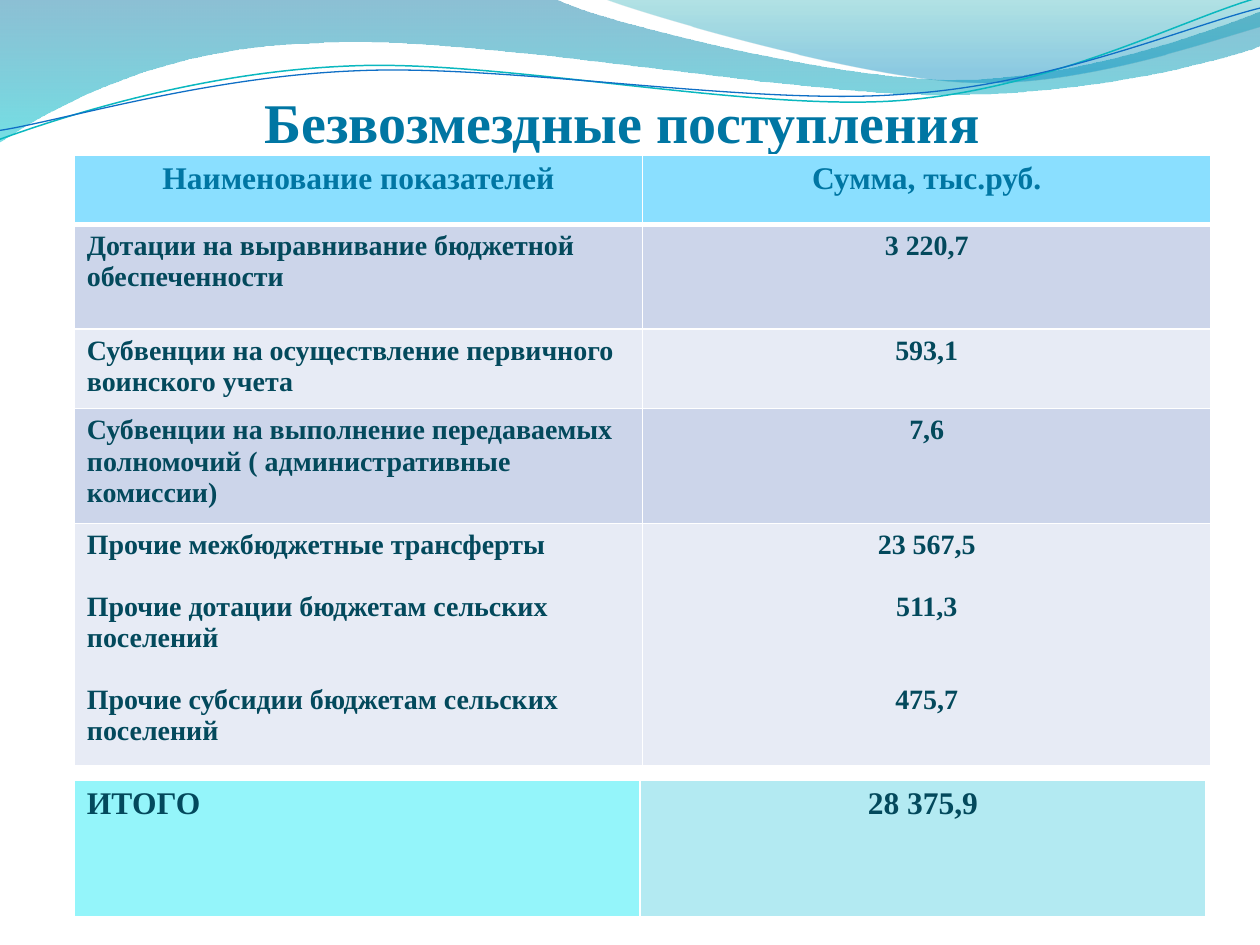
from lxml import etree
from pptx import Presentation
from pptx.dml.color import RGBColor
from pptx.enum.text import MSO_ANCHOR, PP_ALIGN
from pptx.oxml.ns import qn
from pptx.util import Inches, Pt

FONT = "Times New Roman"
WHITE = RGBColor(0xFF, 0xFF, 0xFF)
TITLE_BLUE = RGBColor(0x00, 0x76, 0xA3)
DARK_TEAL = RGBColor(0x03, 0x49, 0x5C)
HEADER_FILL = RGBColor(0x8A, 0xDF, 0xFF)
BAND_FILLS = (RGBColor(0xCC, 0xD5, 0xEA), RGBColor(0xE7, 0xEB, 0xF5))
TOTAL_FILLS = (RGBColor(0x94, 0xF5, 0xFA), RGBColor(0xB3, 0xEA, 0xF2))
WAVE_BLUE = RGBColor(0x00, 0x74, 0xA1)
WAVE_CYAN = RGBColor(0x00, 0xC6, 0xCF)
CREST_TEAL = RGBColor(0x00, 0xA1, 0xA9)
CREST_BLUE = RGBColor(0x00, 0x8B, 0xBF)
LINE_TEAL = RGBColor(0x0A, 0xB8, 0xBF)
LINE_BLUE = RGBColor(0x0F, 0x6F, 0xC6)

WAVE_BOX = (-0.01, -0.01, 10.02, 1.14)
WAVE = [(0, 0), (4.4, -0.01), (4.76, 0.17, 6.64, 0.63, 7.58, 0.63),
        (8.53, 0.63, 9.58, 0.26, 10, 0.09), (10.01, 0.36),
        (9.83, 0.44, 8.7, 0.76, 7.46, 0.75), (6.22, 0.75, 3.82, 0.28, 2.57, 0.34),
        (1.29, 0.36, 0.46, 0.83, -0.01, 1.13), (0, 0)]
CREST_BOX = (4.79, -0.01, 5.21, 0.7)
CREST = [(4.79, -0.01), (5.09, 0.11, 6.82, 0.62, 7.69, 0.65),
         (8.56, 0.69, 9.61, 0.32, 10, 0.21), (10, 0), (4.79, -0.01)]
UPPER_BOX = (-0.02, 0.22, 10.02, 0.71)
UPPER_LINE = [(-0.02, 0.87), (0.47, 0.72, 1.58, 0.41, 2.78, 0.42),
              (3.96, 0.42, 5.91, 0.93, 7.12, 0.9), (8.32, 0.87, 9.4, 0.36, 10, 0.22)]
LOWER_BOX = (-0.02, 0.3, 10.03, 0.58)
LOWER_LINE = [(-0.02, 0.8), (0.46, 0.75, 1.64, 0.45, 2.83, 0.46),
              (4.03, 0.46, 5.96, 0.89, 7.16, 0.85), (8.35, 0.83, 9.42, 0.42, 10.02, 0.3)]
LINE_TILT = 357.3

HEADERS = ("Наименование показателей", "Сумма, тыс.руб.")
ROWS = [
    (0.83, ["Дотации на выравнивание бюджетной обеспеченности"], ["3 220,7"]),
    (0.6, ["Субвенции на осуществление первичного воинского учета"], ["593,1"]),
    (0.91, ["Субвенции на выполнение передаваемых полномочий "
            "( административные комиссии)"], ["7,6"]),
    (1.33, ["Прочие межбюджетные трансферты",
            "Прочие дотации бюджетам сельских поселений",
            "Прочие субсидии бюджетам сельских поселений"],
     ["23 567,5", "511,3", "475,7"]),
]
NAME_GAPS = (0, 17.7, 17.7)
AMOUNT_GAPS = (0, 17.7, 35.4)


def add_outline(slide, box, segments, closed):
    """Add a freeform of lines and cubic curves in the given box."""
    left, top, width, height = map(Inches, box)
    builder = slide.shapes.build_freeform(left, top)
    builder.add_line_segments([(left + width, top), (left + width, top + height)])
    shape = builder.convert_to_shape()
    shape.shadow.inherit = False
    outline = next(shape._element.iter(qn("a:path")))
    for child in list(outline):
        outline.remove(child)
    for index, segment in enumerate(segments):
        kind = "cubicBezTo" if len(segment) == 6 else "lnTo" if index else "moveTo"
        command = etree.SubElement(outline, qn(f"a:{kind}"))
        for x, y in zip(segment[::2], segment[1::2]):
            etree.SubElement(command, qn("a:pt"),
                             x=str(Inches(x) - left), y=str(Inches(y) - top))
    if closed:
        etree.SubElement(outline, qn("a:close"))
    return shape


def add_wave(slide, box, segments, stops):
    """Add a filled wave with a translucent vertical gradient."""
    shape = add_outline(slide, box, segments, True)
    shape.line.fill.background()
    shape.fill.gradient()
    shape.fill.gradient_angle = 270
    for stop, (position, color, _) in zip(shape.fill.gradient_stops, stops):
        stop.position = position
        stop.color.rgb = color
    colors = shape._element.spPr.iter(qn("a:srgbClr"))
    for color, (_, _, opacity) in zip(list(colors), stops):
        etree.SubElement(color, qn("a:alpha"), val=str(opacity * 1000))


def add_wave_line(slide, box, segments, color, width):
    """Add an open, slightly tilted curve."""
    shape = add_outline(slide, box, segments, False)
    shape.rotation = LINE_TILT
    shape.fill.background()
    shape.line.color.rgb = color
    shape.line.width = Pt(width)


def add_waves(slide):
    """Add the decoration along the top edge."""
    add_wave(slide, WAVE_BOX, WAVE, [(0, WAVE_BLUE, 45), (1, WAVE_CYAN, 55)])
    add_wave(slide, CREST_BOX, CREST, [(0, CREST_TEAL, 30), (0.8, CREST_BLUE, 45)])
    add_wave_line(slide, UPPER_BOX, UPPER_LINE, LINE_TEAL, 0.85)
    add_wave_line(slide, LOWER_BOX, LOWER_LINE, LINE_BLUE, 0.75)


def style_paragraph(paragraph, text, size, color, centred):
    """Write bold text into a paragraph."""
    paragraph.text = text
    paragraph.alignment = PP_ALIGN.CENTER if centred else PP_ALIGN.LEFT
    paragraph.font.name = FONT
    paragraph.font.size = Pt(size)
    paragraph.font.bold = True
    paragraph.font.color.rgb = color


def add_title(slide, left, top, width, height):
    """Add the slide title at the bottom of its box."""
    frame = slide.shapes.add_textbox(left, top, width, height).text_frame
    frame.word_wrap = True
    frame.vertical_anchor = MSO_ANCHOR.BOTTOM
    frame.margin_left = frame.margin_right = frame.margin_bottom = 0
    style_paragraph(frame.paragraphs[0], "Безвозмездные поступления", 32, TITLE_BLUE, True)


def set_borders(cell, top=1, bottom=1):
    """Draw white borders around a cell."""
    properties = cell._tc.get_or_add_tcPr()
    for side, width in (("L", 1), ("R", 1), ("T", top), ("B", bottom)):
        line = etree.SubElement(properties, qn(f"a:ln{side}"), w=str(Pt(width)))
        fill = etree.SubElement(line, qn("a:solidFill"))
        etree.SubElement(fill, qn("a:srgbClr"), val=str(WHITE))


def fill_cell(cell, texts, size, color, fill, centred, gaps=(0,), top=1, bottom=1):
    """Set the text, borders and fill of a cell."""
    set_borders(cell, top, bottom)
    cell.fill.solid()
    cell.fill.fore_color.rgb = fill
    frame = cell.text_frame
    for index, (text, gap) in enumerate(zip(texts, gaps)):
        paragraph = frame.add_paragraph() if index else frame.paragraphs[0]
        style_paragraph(paragraph, text, size, color, centred)
        if gap:
            paragraph.space_before = Pt(gap)


def add_two_columns(slide, left, top, width, heights):
    """Add a table of two equal columns with the given row heights."""
    table = slide.shapes.add_table(
        len(heights), 2, left, top, width, Inches(sum(heights))).table
    for row, height in zip(table.rows, heights):
        row.height = Inches(height)
    return table


def add_income_table(slide, left, top, width):
    """Add the table of income items."""
    table = add_two_columns(slide, left, top, width, [0.55] + [row[0] for row in ROWS])
    for column, header in enumerate(HEADERS):
        fill_cell(table.cell(0, column), [header], 18, TITLE_BLUE, HEADER_FILL, True, bottom=3)
    for index, (_, names, amounts) in enumerate(ROWS):
        fill = BAND_FILLS[index % 2]
        border = 1 if index else 3
        fill_cell(table.cell(index + 1, 0), names, 16, DARK_TEAL, fill, False,
                  NAME_GAPS, border)
        fill_cell(table.cell(index + 1, 1), amounts, 16, DARK_TEAL, fill, True,
                  AMOUNT_GAPS, border)


def add_total_table(slide, left, top, width, height):
    """Add the row with the total."""
    table = add_two_columns(slide, left, top, width, [height])
    for column, text in enumerate(("ИТОГО", "28 375,9")):
        fill_cell(table.cell(0, column), [text], 18, DARK_TEAL, TOTAL_FILLS[column],
                  column == 1, bottom=3)


def main():
    """Build and save the presentation."""
    presentation = Presentation()
    presentation.slide_width = Inches(10)
    presentation.slide_height = Inches(7.5)
    slide = presentation.slides.add_slide(presentation.slide_layouts[6])
    add_waves(slide)
    add_title(slide, Inches(0.5), Inches(0.21), Inches(8.88), Inches(1.02))
    add_income_table(slide, Inches(0.59), Inches(1.23), Inches(9.02))
    add_total_table(slide, Inches(0.59), Inches(6.19), Inches(8.98), 1.1)
    presentation.save("out.pptx")


if __name__ == "__main__":
    main()
